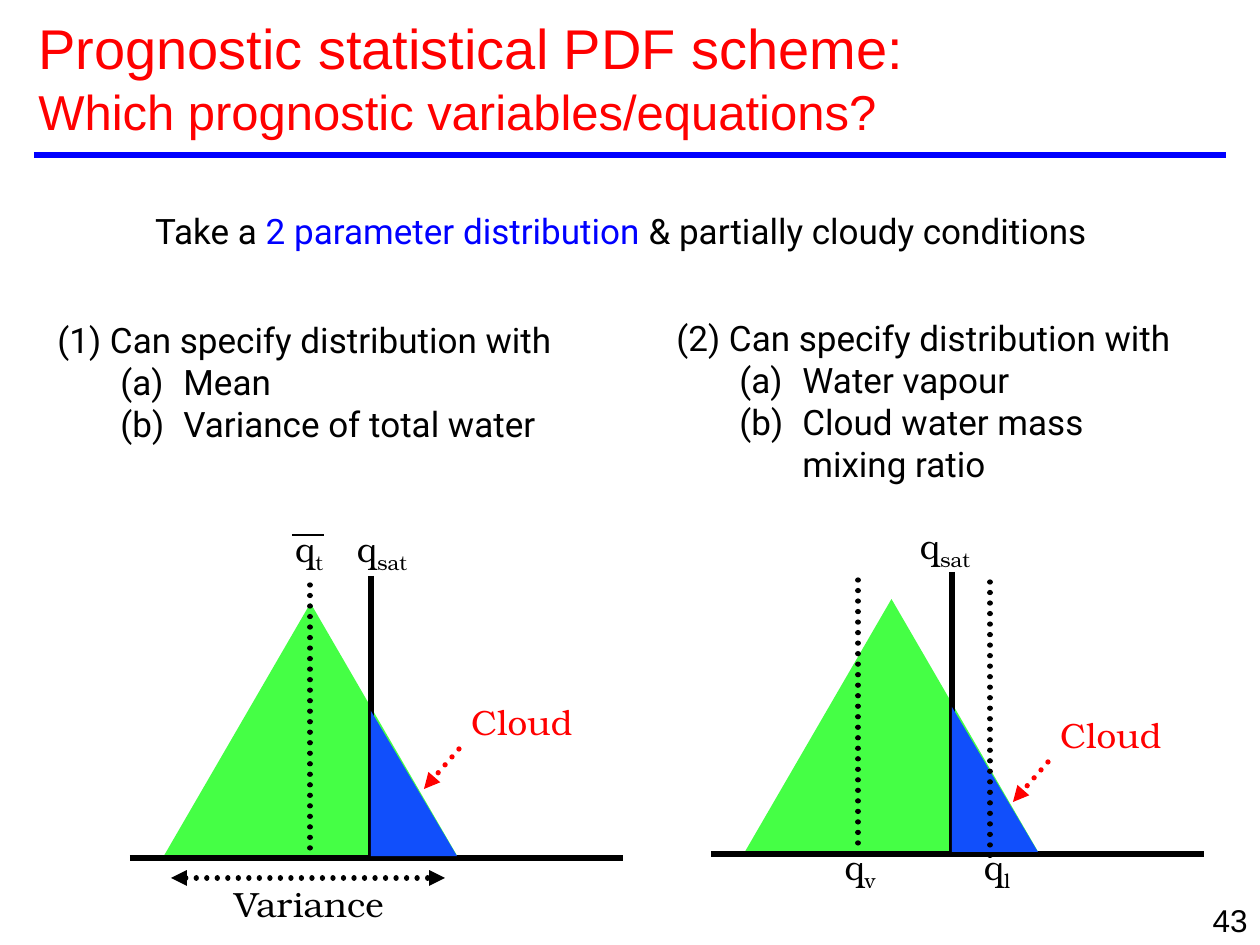
"""Slide on the choice of prognostic variables in a statistical PDF cloud scheme."""
from lxml.etree import SubElement
from pptx import Presentation
from pptx.dml.color import RGBColor
from pptx.enum.dml import MSO_LINE
from pptx.enum.shapes import MSO_CONNECTOR, MSO_SHAPE
from pptx.enum.text import MSO_ANCHOR, PP_ALIGN
from pptx.oxml.ns import qn
from pptx.util import Pt


class Theme:
    red, blue, black = "FF0000", "0000FF", "000000"
    green, cloud = "45FF45", "114FFB"
    head, body, math = "Arial", "Roboto", "TeX Gyre Bonum"
    title, sub, text, page = 32, 28, 20, 18
    thick, thin = 3, 1.5


TITLE = [
    ("Prognostic statistical PDF scheme:", Theme.title),
    ("Which prognostic variables/equations?", Theme.sub),
]
INTRO = [
    ("Take a ", Theme.black),
    ("2 parameter distribution", Theme.blue),
    (" & partially cloudy conditions", Theme.black),
]
LISTS = [
    ((45, 312, 524, 140), "(1) Can specify distribution with",
     ["Mean", "Variance of total water"]),
    ((664, 310, 525, 181), "(2) Can specify distribution with",
     ["Water vapour", "Cloud water mass mixing ratio"]),
]
PANELS = [
    {"at": (130, 858), "sat": (382, 551), "cloud": (522, 721),
     "dots": [(310, 585, 858)], "names": [("q", "t", 309, 551)]},
    {"at": (711, 854), "sat": (945, 548), "cloud": (1111, 734),
     "dots": [(858, 580, 852), (990, 582, 856)],
     "names": [("q", "v", 860, 869), ("q", "l", 997, 869)]},
]
PX = 914400 / 126


def emu(*nums):
    return [round(n * PX) for n in nums]


def rgb(code):
    return RGBColor.from_string(code)


def style(font, name, size, color):
    font.name, font.size = name, Pt(size)
    font.color.rgb = rgb(color)


def frame(slide, box, wrap=True, anchor=MSO_ANCHOR.TOP):
    text = slide.shapes.add_textbox(*emu(*box)).text_frame
    text.word_wrap, text.vertical_anchor = wrap, anchor
    return text


def label(slide, word, x, y, width=80, sub="", color=Theme.black):
    box = (x - width / 2, y - 27, width, 54)
    para = frame(slide, box, False, MSO_ANCHOR.MIDDLE).paragraphs[0]
    para.alignment = PP_ALIGN.CENTER
    style(para.font, Theme.math, Theme.text, color)
    para.add_run().text = word
    if sub:
        run = para.add_run()
        run.text = sub
        run._r.get_or_add_rPr().set("baseline", "-25000")


def line(slide, ends, color=Theme.black, width=Theme.thick, dots=False, tips=()):
    link = slide.shapes.add_connector(MSO_CONNECTOR.STRAIGHT, *emu(*ends))
    link.line.color.rgb, link.line.width = rgb(color), Pt(width)
    stroke = link.line._get_or_add_ln()
    if dots:
        link.line.dash_style = MSO_LINE.ROUND_DOT
        stroke.set("cap", "rnd")
    for tip in tips:
        SubElement(stroke, qn(f"a:{tip}"), type="triangle")
    SubElement(link._element.spPr, qn("a:effectLst"))


def solid(slide, kind, box, color):
    shape = slide.shapes.add_shape(kind, *emu(*box))
    shape.shadow.inherit = False
    shape.fill.solid()
    shape.fill.fore_color.rgb = rgb(color)
    shape.line.fill.background()


def heading(slide):
    para = frame(slide, (26, 19, 1008, 116), anchor=MSO_ANCHOR.MIDDLE).paragraphs[0]
    for num, (words, size) in enumerate(TITLE):
        if num:
            para.add_line_break()
        run = para.add_run()
        run.text = words
        style(run.font, Theme.head, size, Theme.red)
    line(slide, (34, 155, 1226, 155), Theme.blue)


def intro(slide):
    para = frame(slide, (32, 203, 1178, 54)).paragraphs[0]
    para.alignment = PP_ALIGN.CENTER
    para.font.name, para.font.size = Theme.body, Pt(Theme.text)
    for words, color in INTRO:
        run = para.add_run()
        run.text = words
        run.font.color.rgb = rgb(color)


def points(slide, box, lead, items):
    text = frame(slide, box)
    for num, words in enumerate([lead, *items]):
        para = text.add_paragraph() if num else text.paragraphs[0]
        para.text = words
        props = para._p.get_or_add_pPr()
        left, hang = emu(126 if num else 63, -63)
        props.set("marL", str(left))
        props.set("indent", str(hang))
        if num:
            para.level = 1
            SubElement(props, qn("a:buFontTx"))
            SubElement(props, qn("a:buAutoNum"), type="alphaLcParenBoth")
        style(para.font, Theme.body, Theme.text, Theme.black)


def panel(slide, data):
    x, y = data["at"]
    wall = x + 241
    solid(slide, MSO_SHAPE.ISOSCELES_TRIANGLE, (x + 32, y - 255, 297, 256), Theme.green)
    line(slide, (x, y, x + 493, y))
    line(slide, (wall, y - 282, wall, y))
    solid(slide, MSO_SHAPE.RIGHT_TRIANGLE, (wall, y - 147, 86, 145), Theme.cloud)
    for mark, top, base in data["dots"]:
        line(slide, (mark, top, mark, base), dots=True)
    label(slide, "q", *data["sat"], sub="sat")
    for word, sub, left, mid in data["names"]:
        label(slide, word, left, mid, sub=sub)
    left, mid = data["cloud"]
    label(slide, "Cloud", left, mid, 140, color=Theme.red)
    line(slide, (left - 63, mid + 28, left - 98, mid + 68), Theme.red,
         dots=True, tips=["tailEnd"])


def main():
    deck = Presentation()
    deck.slide_width, deck.slide_height = emu(1260, 945)
    slide = deck.slides.add_slide(deck.slide_layouts[6])
    heading(slide)
    intro(slide)
    for data in PANELS:
        panel(slide, data)
    for entry in LISTS:
        points(slide, *entry)
    line(slide, (171, 878, 445, 878), dots=True, tips=["headEnd", "tailEnd"])
    label(slide, "Variance", 309, 903, 200)
    line(slide, (292, 535, 324, 535), width=Theme.thin)
    para = frame(slide, (998, 895, 262, 63)).paragraphs[0]
    para.text, para.alignment = "43", PP_ALIGN.RIGHT
    style(para.font, Theme.head, Theme.page, Theme.black)
    deck.save("out.pptx")


if __name__ == "__main__":
    main()
